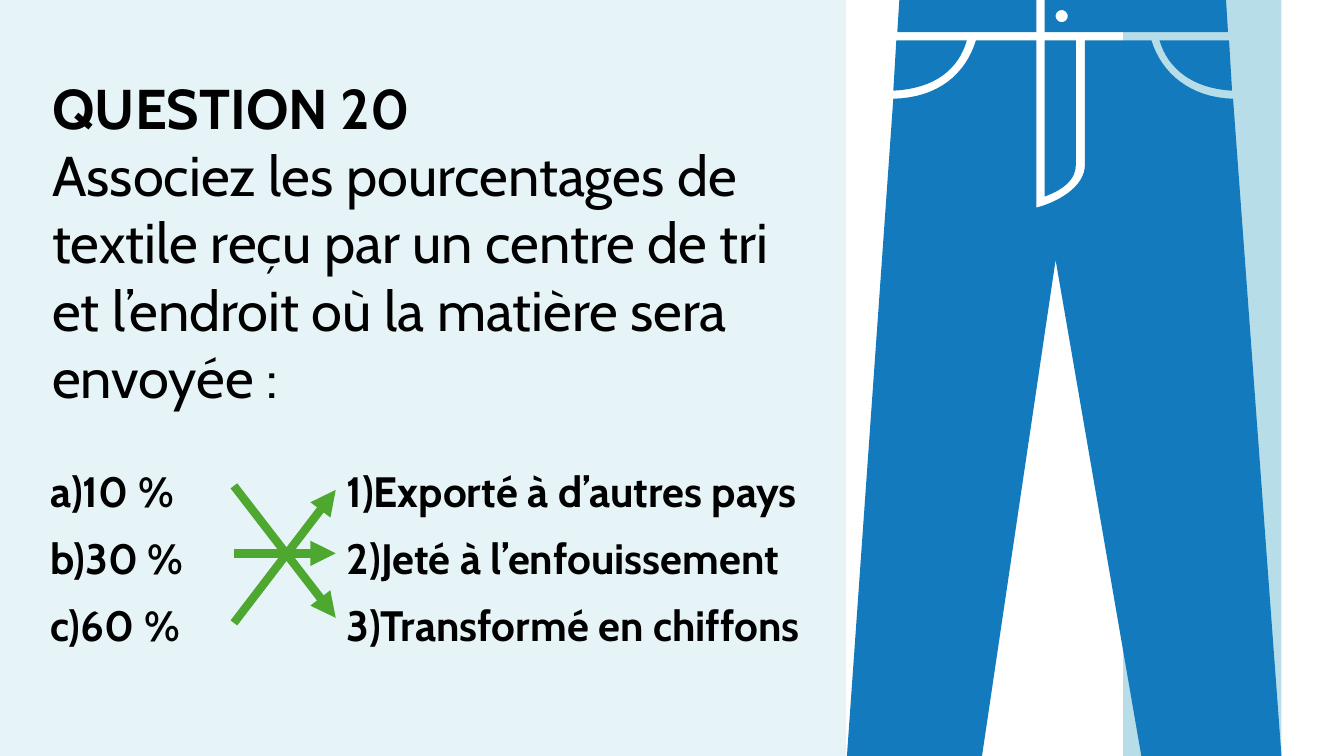
from dataclasses import dataclass
from math import cos, sin, tau

from lxml.etree import SubElement
from pptx import Presentation
from pptx.dml.color import RGBColor
from pptx.enum.shapes import MSO_CONNECTOR, MSO_SHAPE
from pptx.enum.text import MSO_AUTO_SIZE
from pptx.oxml.ns import qn
from pptx.util import Inches, Pt


@dataclass(frozen=True)
class Theme:
    font: str = "Cabin"
    ink: RGBColor = RGBColor(0, 0, 0)
    pale: RGBColor = RGBColor(0xB7, 0xDE, 0xE8)
    denim: RGBColor = RGBColor(0x14, 0x7A, 0xBE)
    arrow: RGBColor = RGBColor(0x4E, 0xA7, 0x2E)
    question_size: Pt = Pt(40)
    answer_size: Pt = Pt(30.3)
    leading: Pt = Pt(48)
    arrow_width: Pt = Pt(6)


theme = Theme()


def curve(start, pull_out, pull_in, end, steps=16):
    """Return points along a cubic Bezier, both ends included."""
    points = []
    for step in range(steps + 1):
        t = step / steps
        weights = ((1 - t) ** 3, 3 * t * (1 - t) ** 2, 3 * t ** 2 * (1 - t), t ** 3)
        corners = (start, pull_out, pull_in, end)
        points.append(tuple(sum(w * c[axis] for w, c in zip(weights, corners))
                            for axis in (0, 1)))
    return points


def add_text(slide, area, lines, size, numbering=None):
    """Add lines of (text, bold), numbered when a scheme is given."""
    box = slide.shapes.add_textbox(*map(Inches, area))
    frame = box.text_frame
    frame_format = {"word_wrap": True, "auto_size": MSO_AUTO_SIZE.SHAPE_TO_FIT_TEXT,
                    "margin_left": 0, "margin_right": 0,
                    "margin_top": Inches(0.01), "margin_bottom": 0}
    for key, value in frame_format.items():
        setattr(frame, key, value)
    for index, (text, bold) in enumerate(lines):
        paragraph = frame.add_paragraph() if index else frame.paragraphs[0]
        paragraph.line_spacing = theme.leading
        run = paragraph.add_run()
        run.text = text
        for key, value in {"name": theme.font, "size": size, "bold": bold}.items():
            setattr(run.font, key, value)
        run.font.color.rgb = theme.ink
        properties = paragraph._p.get_or_add_pPr()
        properties.set("marL", str(Inches(0.01)))
        if numbering:
            properties.set("indent", str(Inches(-0.76)))
            SubElement(properties, qn("a:buFont"), typeface="+mj-lt")
            SubElement(properties, qn("a:buAutoNum"), type=numbering)
            tabs = SubElement(properties, qn("a:tabLst"))
            SubElement(tabs, qn("a:tab"), pos=str(Inches(0.76)), algn="l")


deck = Presentation()
deck.slide_width, deck.slide_height = Inches(13.33), Inches(7.5)
slide = deck.slides.add_slide(deck.slide_layouts[6])

# Pale panels behind the question and the right leg
for left, width, opacity in [(-0.02, 8.41, 33), (11.14, 1.57, 100)]:
    panel = slide.shapes.add_shape(MSO_SHAPE.RECTANGLE, Inches(left), 0,
                                   Inches(width), Inches(7.5))
    panel.shadow.inherit = False
    panel.line.fill.background()
    panel.fill.solid()
    panel.fill.fore_color.rgb = theme.pale
    if opacity < 100:
        tint = panel._element.spPr.find(qn("a:solidFill"))[0]
        SubElement(tint, qn("a:alpha"), val=str(opacity * 1000))

# Trousers: the gaps between the pieces form the seams
waist_left = [(8.92, 0), (10.28, 0), (10.28, 0.32), (8.9, 0.32)]
waist_right = [(10.36, 0), (12.16, 0), (12.18, 0.32), (10.36, 0.32)]
buttonhole = [(10.53 + 0.06 * cos(tau * i / 24), 0.16 + 0.06 * sin(tau * i / 24))
              for i in range(24)]
legs = [
    *curve((9.68, 0.4), (9.58, 0.73), (9.31, 0.97), (8.86, 0.98)),
    (8.4, 7.5), (9.74, 7.5), (10.47, 2.58), (11.32, 7.5), (12.71, 7.5),
    *curve((12.23, 0.98), (11.81, 0.97), (11.52, 0.73), (11.42, 0.4)),
    (10.76, 0.4),
    *curve((10.76, 1.64), (10.76, 1.83), (10.54, 1.99), (10.28, 2.06)),
    (10.28, 0.4),
]
fly = [(10.67, 0.4), (10.36, 0.4),
       *curve((10.36, 1.95), (10.53, 1.89), (10.67, 1.79), (10.67, 1.64))]
pocket_left = [(8.89, 0.4),
               *curve((9.59, 0.4), (9.51, 0.68), (9.28, 0.88), (8.86, 0.9))]
pocket_right = [(12.19, 0.4),
                *curve((11.5, 0.4), (11.58, 0.68), (11.83, 0.88), (12.22, 0.9))]

outline = None
for piece in (waist_left, waist_right, buttonhole, legs, fly, pocket_left, pocket_right):
    first, *rest = [(Inches(x), Inches(y)) for x, y in piece]
    if outline is None:
        outline = slide.shapes.build_freeform(*first)
    else:
        outline.move_to(*first)
    outline.add_line_segments(rest, close=True)
trousers = outline.convert_to_shape()
trousers.shadow.inherit = False
trousers.line.fill.background()
trousers.fill.solid()
trousers.fill.fore_color.rgb = theme.denim

# Question and the two lists to match
add_text(slide, (0.51, 0.72, 7.36, 3.37), [
    ("QUESTION 20", True),
    ("Associez les pourcentages de textile reçu par un centre de tri et "
     "l’endroit où la matière sera envoyée :", False),
], theme.question_size)
answer_lists = [
    (0.5, 2.43, "alphaLcParenR", ["10 %", "30 %", "60 %"]),
    (3.44, 5.86, "arabicParenR",
     ["Exporté à d’autres pays", "Jeté à l’enfouissement", "Transformé en chiffons"]),
]
for left, width, numbering, answers in answer_lists:
    add_text(slide, (left, 4.44, width, 1.98), [(answer, True) for answer in answers],
             theme.answer_size, numbering)

# Arrows pairing each percentage with its destination
for start_y, end_y in [(4.82, 6.13), (5.49, 5.49), (6.18, 4.86)]:
    match = slide.shapes.add_connector(MSO_CONNECTOR.STRAIGHT, Inches(2.32), Inches(start_y),
                                       Inches(3.33), Inches(end_y))
    match.line.color.rgb = theme.arrow
    match.line.width = theme.arrow_width
    SubElement(match.line._get_or_add_ln(), qn("a:tailEnd"), type="triangle")
    SubElement(match._element.spPr, qn("a:effectLst"))

deck.save("out.pptx")
